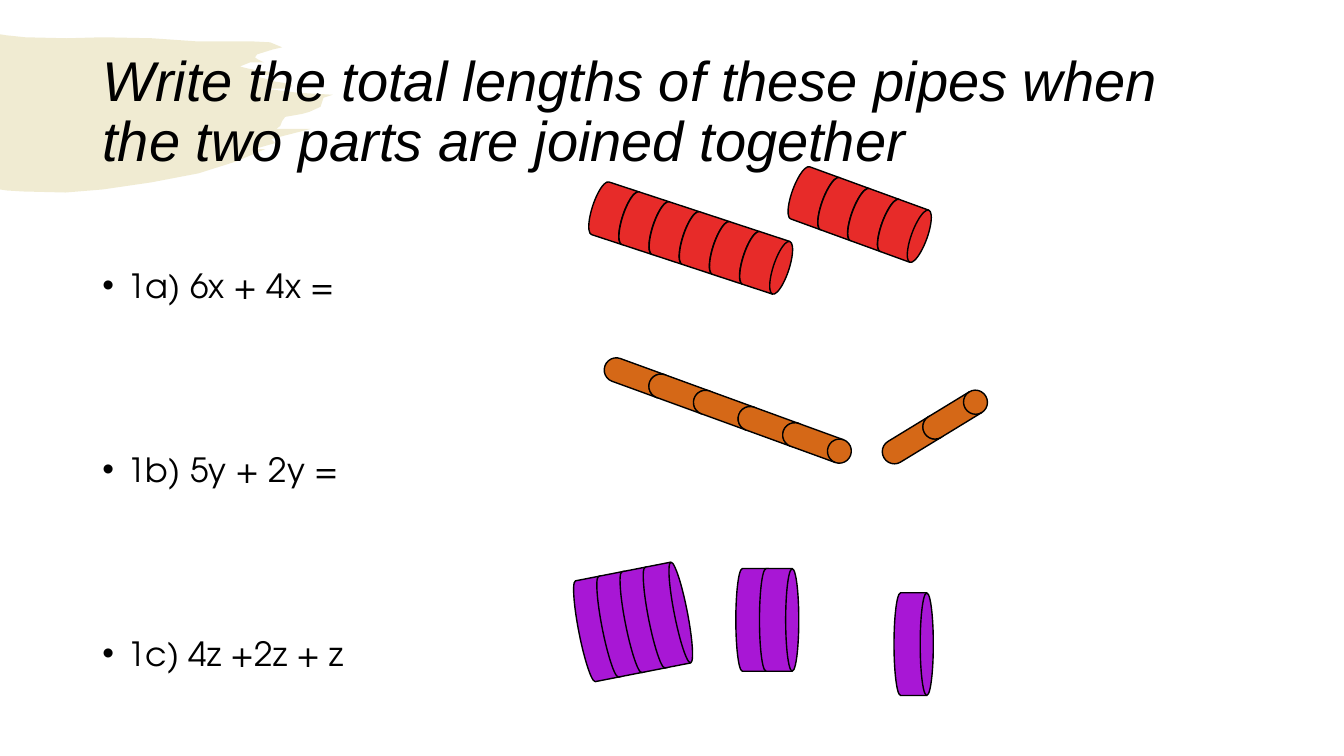
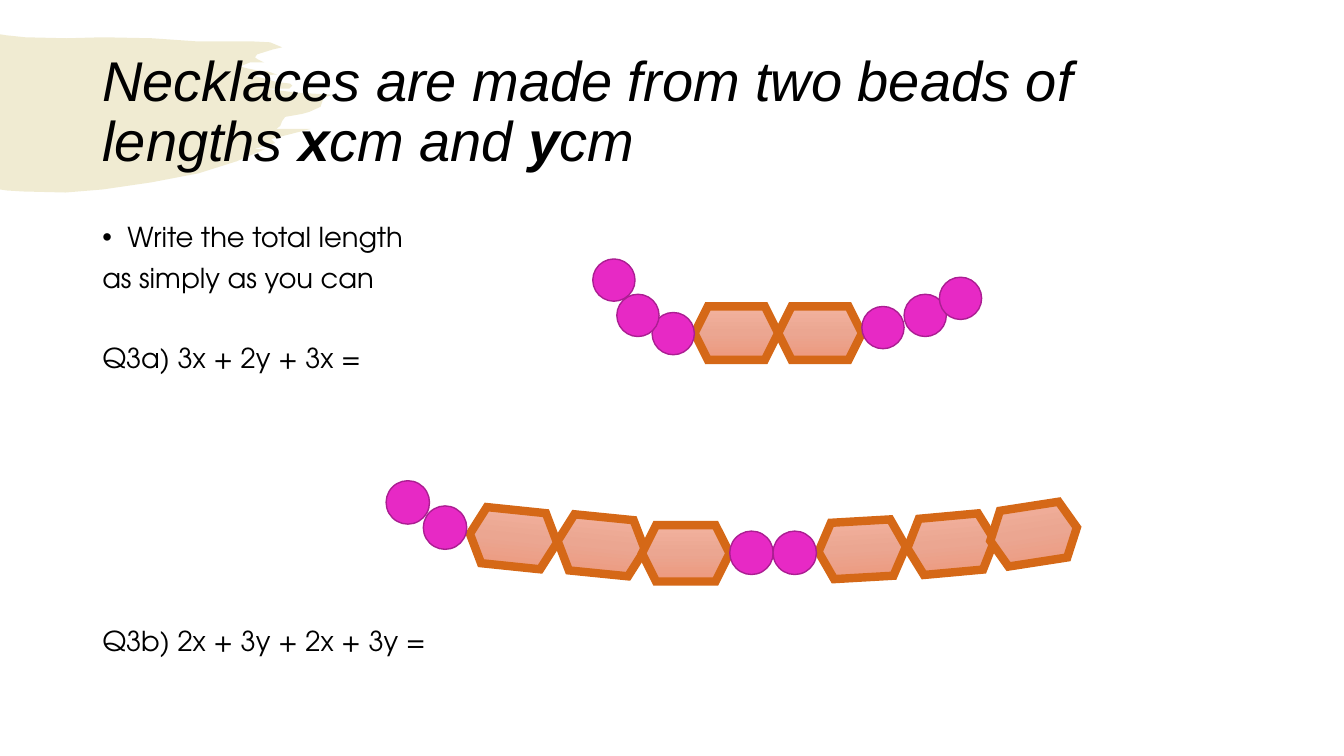
import copy
import math
import pptx
import pptx.util
import pptx.dml.color
import pptx.enum.shapes
import pptx.enum.text
import pptx.oxml
import pptx.oxml.ns

Pt = pptx.util.Pt
qn = pptx.oxml.ns.qn
KIND = pptx.enum.shapes.MSO_SHAPE
TEXT = pptx.enum.text
RED, ORANGE, PURPLE, PINK = "E72B29", "D56817", "A817D5", "E729C5"


def color(code):
    return pptx.dml.color.RGBColor.from_string(code)


def draw(slide, kind, box, fill, edge, width=1, turn=0):
    shape = slide.shapes.add_shape(kind, *[Pt(n) for n in box])
    shape.rotation = turn
    shape.shadow.inherit = False
    shape.fill.solid()
    shape.fill.fore_color.rgb = color(fill)
    shape.line.color.rgb = color(edge)
    shape.line.width = Pt(width)
    return shape


deck = pptx.Presentation()
deck.slide_width, deck.slide_height = Pt(960), Pt(540)
layout = deck.slide_layouts[5]

# Title place, shared through the layout
head = layout.placeholders[0]
head.left, head.top, head.width, head.height = Pt(66), Pt(28.8), Pt(828), Pt(104.4)

# Titles as (text, bold) runs; lines as (text, rows down, bullet)
pages = [
    ([("Write the total lengths of these pipes when the two parts are joined together", False)],
     191.25, 23.8,
     [("1a) 6x + 4x =", 0, True), ("1b) 5y + 2y =", 4, True), ("1c) 4z +2z + z", 4, True)]),
    ([("Necklaces are made from two beads of lengths ", False), ("x", True),
      ("cm and ", False), ("y", True), ("cm", False)],
     158.4, 19.6,
     [("Write the total length", 0, True), ("as simply as you can", 1, False),
      ("Q3a) 3x + 2y + 3x =", 2, False), ("Q3b) 2x + 3y + 2x + 3y =", 7, False)]),
]
slides = []
for title, top, size, lines in pages:
    slide = deck.slides.add_slide(layout)
    slides.append(slide)
    frame = slide.shapes.title.text_frame
    frame.auto_size = TEXT.MSO_AUTO_SIZE.NONE
    frame.vertical_anchor = TEXT.MSO_ANCHOR.MIDDLE
    para = frame.paragraphs[0]
    para.alignment = TEXT.PP_ALIGN.LEFT
    para.line_spacing = 0.9
    para.font.name, para.font.size, para.font.italic = "Arial", Pt(40), True
    para.font.color.rgb = color("000000")
    for text, bold in title:
        run = para.add_run()
        run.text = text
        if bold:
            run.font.bold = True

    # Questions: each row is one line of text plus 10 points
    frame = slide.shapes.add_textbox(Pt(66), Pt(top), Pt(828), Pt(486 - top)).text_frame
    frame.word_wrap = True
    lead = 0.96 * size
    for i, (text, rows, dot) in enumerate(lines):
        para = frame.add_paragraph() if i else frame.paragraphs[0]
        para.text = text
        para.line_spacing = 0.8
        if rows:
            para.space_before = Pt(rows * (lead + 10) - lead)
        para.font.name, para.font.size = "TeX Gyre Adventor", Pt(size)
        para.font.color.rgb = color("000000")
        props = para._p.get_or_add_pPr()
        props.set("marL", str(Pt(18)))
        props.set("indent", str(Pt(-18)))
        if dot:
            font = pptx.oxml.ns.nsdecls("a")
            mark = pptx.oxml.parse_xml(f'<a:buFont {font} typeface="Arial"/>')
            sign = pptx.oxml.parse_xml(f'<a:buChar {font} char="•"/>')
            fill = props.find(qn("a:defRPr"))
            for node in (mark, sign):
                if fill is None:
                    props.append(node)
                else:
                    fill.addprevious(node)

# Brush stroke, in units of 0.72 points, moved to the layout
edge = [
    (6, 35), (25, 37), (66, 38), (102, 37), (151, 38), (194, 41), (248, 41), (268, 41.5),
    (280, 47), (271, 49), (255, 54), (253, 57), (256, 59), (262, 62), (248, 62), (238, 66),
    (246, 68), (256, 70), (266, 71), (275, 74), (251, 75), (263, 78), (273, 81), (280, 82),
    (288, 83), (290, 85), (287, 88), (284, 88), (263, 88), (295, 92.5), (330, 94), (321, 97),
    (318, 106), (307, 111), (300, 113), (283, 116), (280, 120), (278, 125), (274, 128),
    (308, 128), (269, 138), (273, 142), (252, 148), (263, 148), (235, 160), (197, 172),
    (150, 181), (102, 188), (65, 191), (23, 190), (7, 189), (0, 188),
]
pen = slides[0].shapes.build_freeform(0, 34, scale=Pt(0.72))
pen.add_line_segments(edge, close=True)
brush = pen.convert_to_shape()
brush.shadow.inherit = False
brush.fill.solid()
brush.fill.fore_color.rgb = color("B79F20")
brush.line.fill.background()
tint = brush._element.spPr.find(qn("a:solidFill"))[0]
tint.append(pptx.oxml.parse_xml(f'<a:alpha {pptx.oxml.ns.nsdecls("a")} val="20000"/>'))
brush._element.nvSpPr.cNvPr.set("id", "20")
layout.shapes.element.insert(2, brush._element)

# Pipes: left, top, width, height, turn, step along the pipe, parts, colour
pipes = [
    (422.6, 132.5, 33.8, 39.6, 18.2, 22.7, 6, RED),
    (565.2, 121.8, 33.8, 39.6, 20, 22.7, 4, RED),
    (430.6, 261.4, 51.1, 17.3, 20, 33.9, 5, ORANGE),
    (627.8, 305.2, 51.1, 17.3, -31.4, 33.9, 2, ORANGE),
    (413.3, 412.4, 28.1, 73.4, -11.1, 16.9, 4, PURPLE),
    (525.6, 406.1, 28.1, 73.4, 0, 16.9, 2, PURPLE),
    (638.6, 423.4, 28.1, 73.4, 0, 16.9, 1, PURPLE),
]
for x, y, w, h, turn, step, count, fill in pipes:
    angle = math.radians(turn)
    for i in range(count):
        box = (x + i * step * math.cos(angle), y + i * step * math.sin(angle), w, h)
        draw(slides[0], KIND.FLOWCHART_DIRECT_ACCESS_STORAGE, box, fill, "000000", turn=turn)

# Necklaces: long bead size and places with turn, round bead size and places
chains = [
    ((59.8, 38.2), [(496.1, 218.9, 0), (555.9, 218.9, 0)],
     30.2, [(465.8, 223.2), (440.6, 210.2), (423.4, 185),
            (615.6, 218.9), (645.8, 210.2), (671, 198)]),
    ((62.6, 40.3), [(335.5, 364.3, 5.9), (398.2, 369.4, 5.7), (458.6, 375.1, 0),
                    (584.6, 372.2, -3.3), (648, 368.6, -5.2), (707, 361.4, -8.8)],
     31, [(275.8, 343.4), (302.4, 361.4), (521.3, 379.4), (552.2, 379.4)]),
]
shades = [(0, "F2B29E"), (0.5, "EBA691"), (1, "ED987C")]
for size, longs, wide, rounds in chains:
    for x, y, turn in longs:
        bead = draw(slides[1], KIND.HEXAGON, (x, y, *size), ORANGE, ORANGE, 6, turn)
        line = bead.line._get_or_add_ln()
        line.append(pptx.oxml.parse_xml(
            f'<a:miter {pptx.oxml.ns.nsdecls("a")} lim="800000"/>'))
        bead.fill.gradient()
        bead.fill.gradient_angle = 270
        stops = bead._element.spPr.find(qn("a:gradFill")).find(qn("a:gsLst"))
        stops.insert(1, copy.deepcopy(stops[0]))
        for stop, (place, shade) in zip(bead.fill.gradient_stops, shades):
            stop.position = place
            stop.color.rgb = color(shade)
    for x, y in rounds:
        draw(slides[1], KIND.OVAL, (x, y, wide, wide), PINK, "AB1E92")

deck.save("out.pptx")
